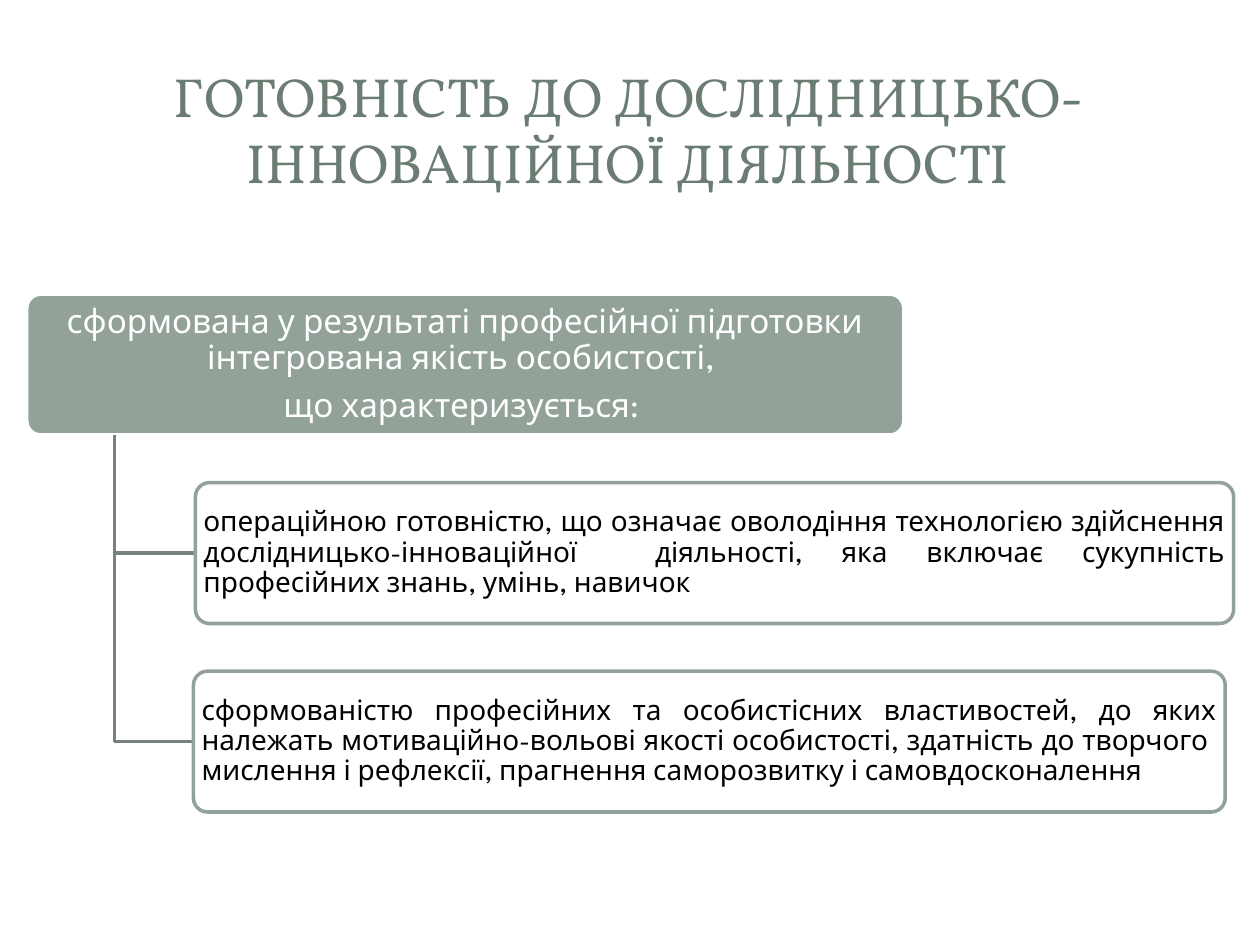
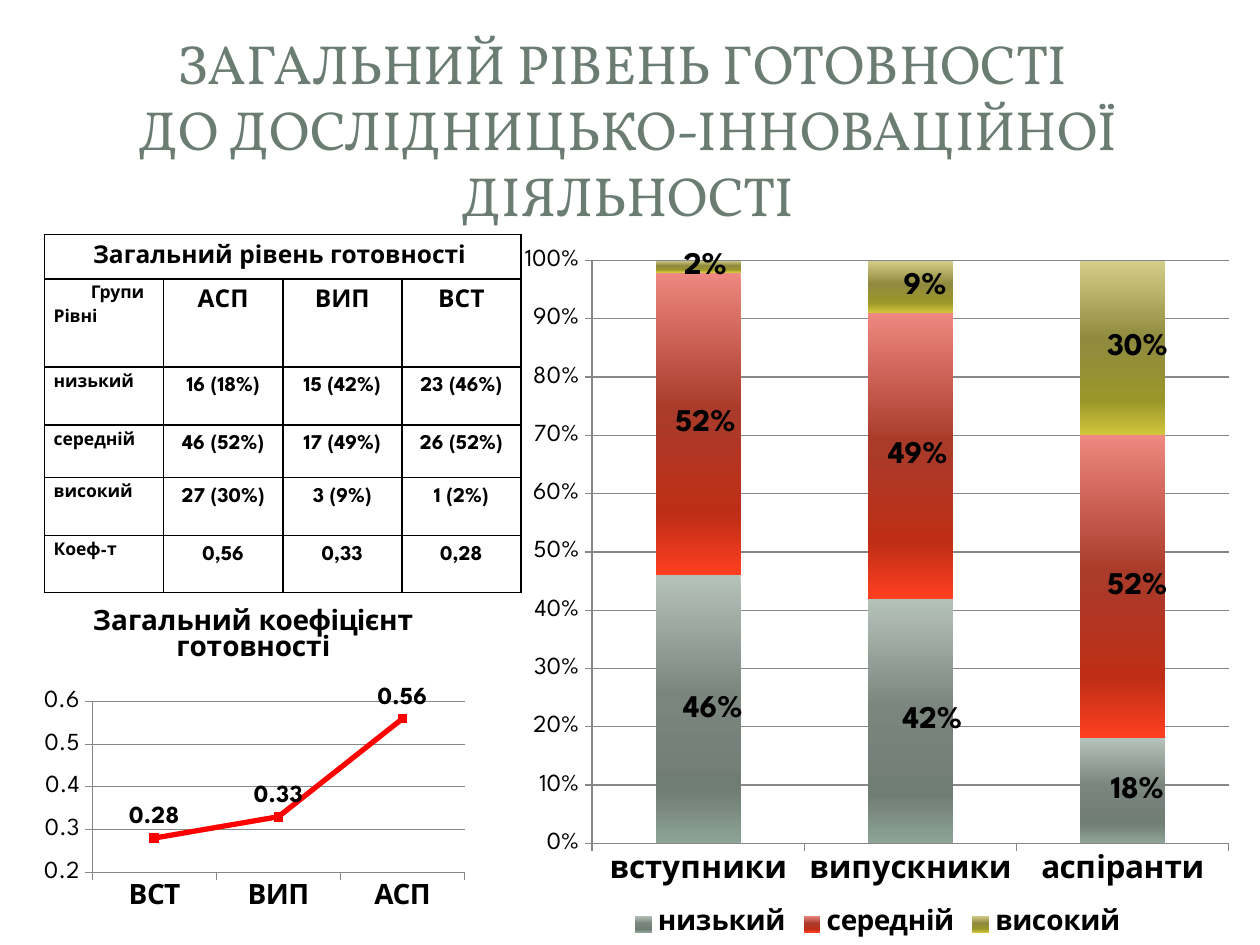
from lxml import etree
from pptx import Presentation
from pptx.chart.data import CategoryChartData
from pptx.dml.color import RGBColor
from pptx.enum.chart import XL_CHART_TYPE as ChartType, XL_LABEL_POSITION as LabelPos
from pptx.enum.chart import XL_LEGEND_POSITION as LegendPos, XL_MARKER_STYLE as Marker
from pptx.enum.chart import XL_TICK_MARK as Tick
from pptx.enum.shapes import MSO_SHAPE as Shape
from pptx.enum.text import MSO_ANCHOR as Anchor, PP_ALIGN as Align
from pptx.oxml import parse_xml
from pptx.oxml.ns import nsdecls, qn
from pptx.util import Cm, Pt

WHITE = RGBColor(0xFF, 0xFF, 0xFF)
BLACK = RGBColor(0, 0, 0)
RED = RGBColor(0xFF, 0, 0)
SAGE = RGBColor(0x93, 0xA2, 0x99)
SAGE_DARK = RGBColor(0x76, 0x82, 0x7B)
TITLE_GREEN = RGBColor(0x6B, 0x7D, 0x72)
GRID_GRAY = RGBColor(0x87, 0x87, 0x87)
GREEN_SHADES = [RGBColor.from_string(c) for c in ("B5C2BA", "7A857E", "707D75", "8EA497")]
RED_SHADES = [RGBColor.from_string(c) for c in ("EE8880", "AA3B2B", "BE2E16", "FF3F20")]
OLIVE_SHADES = [RGBColor.from_string(c) for c in ("D5CE8A", "908A3E", "9B962A", "D2C63C")]
SHADE_STOPS = (0, 45, 80, 100)

TITLE_FONT, BODY_FONT = "Vollkorn", "League Spartan"

QUALITY = ["сформована у результаті професійної підготовки інтегрована якість особистості, ",
           "що характеризується: "]
TRAITS = [
    ((3.94, 9.73, 20.93, 2.84),
     "операційною готовністю, що означає оволодіння технологією здійснення "
     "дослідницько-інноваційної  діяльності, яка включає сукупність професійних "
     "знань, умінь, навичок"),
    ((3.9, 13.53, 20.8, 2.84),
     "сформованістю професійних та особистісних властивостей, до яких належать "
     "мотиваційно-вольові якості особистості, здатність до творчого  мислення і "
     "рефлексії, прагнення саморозвитку і самовдосконалення"),
]

GROUPS = ["АСП", "ВИП", "ВСТ"]
LEVEL_ROWS = [
    ["низький", "16 (18%)", "15 (42%)", "23 (46%)"],
    ["середній", "46 (52%)", "17 (49%)", "26 (52%)"],
    ["високий", "27 (30%)", "3 (9%)", "1 (2%)"],
    ["Коеф-т", "0,56", "0,33", "0,28"],
]
ROW_HEIGHTS = [0.79, 1.78, 1.17, 1.06, 1.17, 1.15]
LEVELS = [
    ("низький", (0.46, 0.42, 0.18), GREEN_SHADES, (0.02, 0.03, 0.02)),
    ("середній", (0.52, 0.49, 0.52), RED_SHADES, (0.01, 0.01, 0.02)),
    ("високий", (0.02, 0.09, 0.3), OLIVE_SHADES, (0.01, 0.02, 0.02)),
]


def style(font, size, color=BLACK, bold=False, name=BODY_FONT):
    """Set the face, size and colour of a font."""
    font.name, font.size, font.bold = name, Pt(size), bold
    font.color.rgb = color


def write(tf, lines, size, align, color=BLACK, bold=False, spacing=0.9, after=0):
    """Write one paragraph per line into a text frame."""
    for i, line in enumerate(lines):
        p = tf.add_paragraph() if i else tf.paragraphs[0]
        p.alignment, p.line_spacing, p.space_after = align, spacing, Pt(after)
        r = p.add_run()
        r.text = line
        style(r.font, size, color, bold)


def add_title(s, lines):
    """Add the centred slide title, one run per forced line."""
    tf = s.shapes.add_textbox(Cm(1.19), Cm(1.14), Cm(22.94), Cm(2.9)).text_frame
    tf.word_wrap, tf.vertical_anchor = True, Anchor.MIDDLE
    p = tf.paragraphs[0]
    p.alignment = Align.CENTER
    for i, line in enumerate(lines):
        if i:
            p.add_line_break()
        r = p.add_run()
        r.text = line
        style(r.font, 31.5, TITLE_GREEN, name=TITLE_FONT)


def add_card(s, box, fill, line, inset):
    """Add a rounded card and return its text frame."""
    sp = s.shapes.add_shape(Shape.ROUNDED_RECTANGLE, *map(Cm, box))
    sp.shadow.inherit = False
    sp.adjustments[0] = 0.1
    sp.fill.solid()
    sp.fill.fore_color.rgb = fill
    sp.line.color.rgb, sp.line.width = line, Pt(2)
    tf = sp.text_frame
    tf.word_wrap, tf.vertical_anchor = True, Anchor.MIDDLE
    tf.margin_left = tf.margin_right = Cm(inset)
    tf.margin_top = tf.margin_bottom = Cm(0.15)
    return tf


def add_branch(s, x, top, box):
    """Draw an elbow from the trunk to the middle of a card's left edge."""
    left, y = box[0], box[1] + box[3] / 2
    builder = s.shapes.build_freeform(Cm(x), Cm(top))
    builder.add_line_segments([(Cm(x), Cm(y)), (Cm(left), Cm(y))], close=False)
    sp = builder.convert_to_shape()
    sp.shadow.inherit = False
    sp.fill.background()
    sp.line.color.rgb, sp.line.width = SAGE_DARK, Pt(2)


def add_hierarchy(s, box):
    """Add the root card with its branches and trait cards."""
    left, top, width, height = box
    tf = add_card(s, box, SAGE, WHITE, 0.2)
    write(tf, QUALITY, 19, Align.CENTER, WHITE, after=6.65)
    for card, text in TRAITS:
        add_branch(s, left + width / 10, top + height, card)
        tf = add_card(s, card, WHITE, SAGE, 0.08)
        write(tf, [text], 16, Align.JUSTIFY)


def border_cell(cell):
    """Give a cell thin black borders on all sides."""
    tc_pr = cell._tc.get_or_add_tcPr()
    for i, side in enumerate(("lnL", "lnR", "lnT", "lnB")):
        tc_pr.insert(i, parse_xml(
            f'<a:{side} {nsdecls("a")} w="12700"><a:solidFill>'
            f'<a:srgbClr val="{BLACK}"/></a:solidFill></a:{side}>'))


def add_level_table(s, box):
    """Add the table of readiness levels by group."""
    table = s.shapes.add_table(len(ROW_HEIGHTS), 4, *map(Cm, box)).table
    for col in table.columns:
        col.width = Cm(box[2] / 4)
    for row, height in zip(table.rows, ROW_HEIGHTS):
        row.height = Cm(height)
    for cell in table.iter_cells():
        cell.fill.solid()
        cell.fill.fore_color.rgb = WHITE
        cell.margin_left = cell.margin_right = Cm(0.18)
        cell.margin_top = cell.margin_bottom = 0
        border_cell(cell)
    head, corner = table.cell(0, 0), table.cell(1, 0)
    head.merge(table.cell(0, 3))
    for c in range(1, 4):
        p = table.cell(0, c).text_frame.paragraphs[0]
        etree.SubElement(p._p, qn("a:endParaRPr")).set("sz", "1000")
    write(head.text_frame, ["Загальний рівень готовності "], 14, Align.CENTER, bold=True, spacing=1.5)
    write(corner.text_frame, ["Групи", "Рівні"], 10, Align.JUSTIFY, bold=True, spacing=1.5)
    corner.text_frame.paragraphs[0]._p.get_or_add_pPr().set("marL", str(Cm(0.75)))
    for c, group in enumerate(GROUPS, 1):
        write(table.cell(1, c).text_frame, [group], 14, Align.CENTER, bold=True, spacing=1.5)
    for r, row in enumerate(LEVEL_ROWS, 2):
        for c, text in enumerate(row):
            size, align = (12, Align.CENTER) if c else (10, Align.JUSTIFY)
            write(table.cell(r, c).text_frame, [text], size, align, bold=True, spacing=1.5)


def manual_layout(target="", **values):
    """Return a chart layout element with the given fractions."""
    layout = etree.Element(qn("c:layout"))
    manual = etree.SubElement(layout, qn("c:manualLayout"))
    if target:
        etree.SubElement(manual, qn("c:layoutTarget")).set("val", target)
    for key, value in values.items():
        etree.SubElement(manual, qn(f"c:{key}")).set("val", str(value))
    return layout


def set_plot_area(chart, x, y, w, h):
    """Fix the inner plot area as fractions of the chart."""
    area = chart._chartSpace.chart.plotArea
    for old in area.findall(qn("c:layout")):
        area.remove(old)
    area.insert(0, manual_layout("inner", xMode="edge", yMode="edge", x=x, y=y, w=w, h=h))


def add_base_chart(s, kind, box, data, cat_size, low, high, step, fmt):
    """Add a chart with the shared fonts, axes and gridlines."""
    chart = s.shapes.add_chart(kind, *map(Cm, box), data).chart
    style(chart.font, 18)
    cat, val = chart.category_axis, chart.value_axis
    style(cat.tick_labels.font, cat_size, bold=True)
    style(val.tick_labels.font, 14)
    val.minimum_scale, val.maximum_scale, val.major_unit = low, high, step
    val.tick_labels.number_format, val.tick_labels.number_format_is_linked = fmt, False
    for axis in (cat, val):
        axis.major_tick_mark, axis.minor_tick_mark = Tick.OUTSIDE, Tick.NONE
        axis.format.line.color.rgb = GRID_GRAY
    val.major_gridlines.format.line.color.rgb = GRID_GRAY
    chart.plots[0].vary_by_categories = False
    return chart


def shade_series(ser, shades):
    """Fill a series with a vertical gradient."""
    ser.format.fill.gradient()
    grad = ser._element.find(".//" + qn("a:gradFill"))
    stops = "".join(f'<a:gs pos="{pos * 1000}"><a:srgbClr val="{c}"/></a:gs>'
                    for pos, c in zip(SHADE_STOPS, shades))
    grad.getparent().replace(grad, parse_xml(
        f'<a:gradFill {nsdecls("a")} rotWithShape="1"><a:gsLst>{stops}</a:gsLst>'
        '<a:lin ang="5400000" scaled="0"/></a:gradFill>'))


def shift_labels(ser, shifts):
    """Move each point label of a series sideways."""
    for i in range(len(shifts)):
        style(ser.points[i].data_label.font, 18, bold=True)
    marks = ser._element.findall(".//" + qn("c:dLbl") + "/" + qn("c:idx"))
    for idx, dx in zip(marks, shifts):
        idx.addnext(manual_layout(x=dx, y=0))


def add_level_chart(s, box):
    """Add the stacked columns of levels by group."""
    data = CategoryChartData(number_format="0%")
    data.categories = ["вступники", "випускники", "аспіранти"]
    for name, values, *_ in LEVELS:
        data.add_series(name, values)
    chart = add_base_chart(s, ChartType.COLUMN_STACKED_100, box, data, 18, 0, 1, 0.1, "0%")
    set_plot_area(chart, 0.11, 0.04, 0.87, 0.82)
    chart.has_title = False
    chart.has_legend = True
    chart.legend.position, chart.legend.include_in_layout = LegendPos.BOTTOM, False
    style(chart.legend.font, 16, bold=True)
    plot = chart.plots[0]
    plot.gap_width, plot.overlap = 150, 100
    for ser, (_, _, shades, shifts) in zip(plot.series, LEVELS):
        shade_series(ser, shades)
        labels = ser.data_labels
        labels.show_value = True
        labels.number_format, labels.number_format_is_linked = "0%", False
        style(labels.font, 18, bold=True)
        shift_labels(ser, shifts)


def add_coefficient_chart(s, box):
    """Add the line of the overall readiness coefficient."""
    data = CategoryChartData()
    data.categories = GROUPS[::-1]
    data.add_series("Series 1", (0.28, 0.33, 0.56))
    chart = add_base_chart(s, ChartType.LINE_MARKERS, box, data, 16, 0.2, 0.6, 0.1, "General")
    set_plot_area(chart, 0.15, 0.3, 0.81, 0.5)
    chart.has_legend = False
    title = chart.chart_title
    r = title.text_frame.paragraphs[0].add_run()
    r.text = "Загальний коефіцієнт готовності"
    style(r.font, 16, bold=True)
    for old in title._element.findall(qn("c:layout")):
        title._element.remove(old)
    title._element.find(qn("c:tx")).addnext(
        manual_layout(xMode="edge", yMode="edge", x=0.14, y=0.01))
    ser = chart.plots[0].series[0]
    ser.smooth = False
    ser.format.line.color.rgb, ser.format.line.width = RED, Pt(3)
    ser.marker.style, ser.marker.size = Marker.SQUARE, 5
    ser.marker.format.fill.solid()
    ser.marker.format.fill.fore_color.rgb = RED
    ser.marker.format.line.color.rgb = RED
    labels = ser.data_labels
    labels.show_value, labels.position = True, LabelPos.ABOVE
    style(labels.font, 14, bold=True)


def main():
    """Build both slides and save the file."""
    prs = Presentation()
    prs.slide_width, prs.slide_height = Cm(25.4), Cm(19.05)
    blank = prs.slide_layouts[6]

    s = prs.slides.add_slide(blank)
    add_title(s, ["ГОТОВНІСТЬ ДО ДОСЛІДНИЦЬКО-ІННОВАЦІЙНОЇ ДІЯЛЬНОСТІ"])
    add_hierarchy(s, (0.54, 5.93, 17.68, 2.84))

    s = prs.slides.add_slide(blank)
    add_title(s, ["ЗАГАЛЬНИЙ РІВЕНЬ ГОТОВНОСТІ ", "ДО ДОСЛІДНИЦЬКО-ІННОВАЦІЙНОЇ ДІЯЛЬНОСТІ"])
    add_level_table(s, (0.9, 4.73, 9.6, 7.12))
    add_level_chart(s, (10.31, 4.68, 14.76, 14.33))
    add_coefficient_chart(s, (0.47, 12.08, 9.27, 6.88))
    prs.save("out.pptx")


if __name__ == "__main__":
    main()
